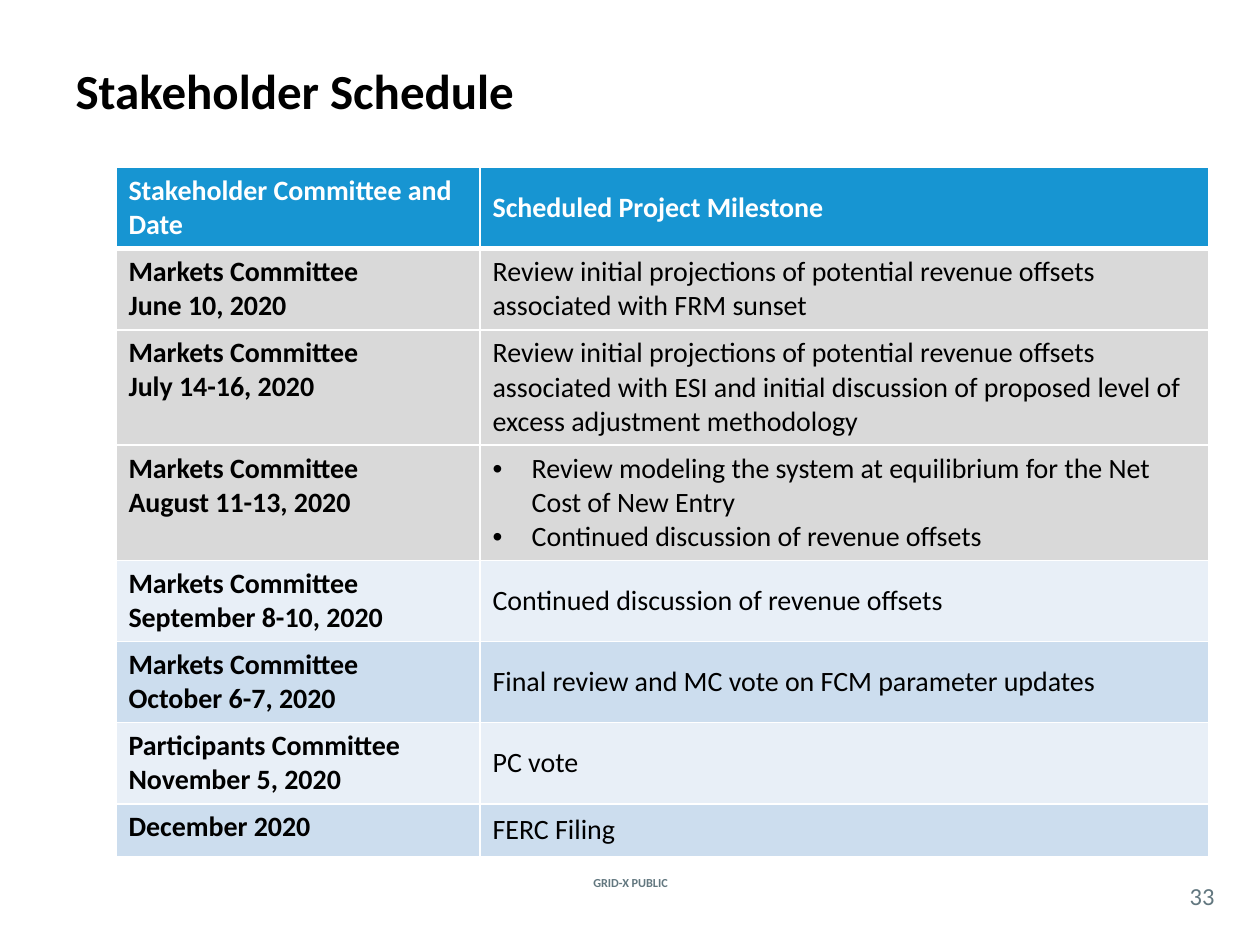
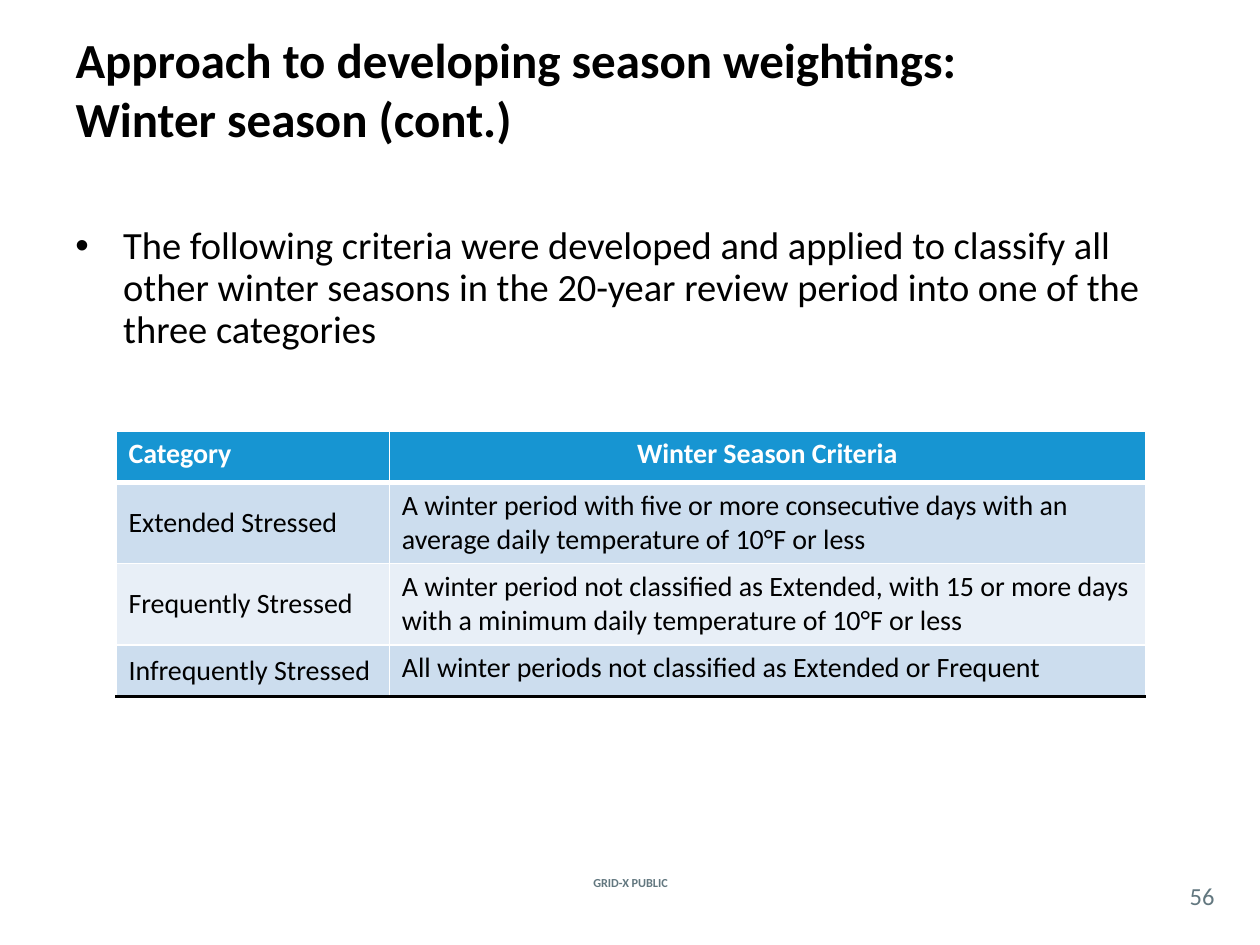
from dataclasses import dataclass

from lxml.etree import SubElement
from pptx import Presentation
from pptx.dml.color import RGBColor
from pptx.enum.text import MSO_ANCHOR as Anchor, MSO_AUTO_SIZE as AutoSize, PP_ALIGN as Align
from pptx.oxml.ns import qn
from pptx.util import Inches, Pt


@dataclass(frozen=True)
class Theme:
    font: str = "Calibri"
    black: str = "000000"
    white: str = "FFFFFF"
    header: str = "1795D2"
    done: str = "D9D9D9"
    light: str = "E8EFF7"
    medium: str = "CCDDEE"
    footer: str = "62777F"
    title_size: int = 28
    body_size: int = 22
    table_size: int = 16
    number_size: int = 14
    footer_size: int = 7
    thin: float = 1
    header_rule: float = 3
    closing_rule: float = 2.25


class DeckBuilder:
    def __init__(self, presentation, theme):
        self.presentation = presentation
        self.theme = theme
        self.slide = None

    def new_slide(self, title, title_top, title_height, number):
        """Start a slide with its title, footer and page number."""
        theme = self.theme
        self.slide = self.presentation.slides.add_slide(self.presentation.slide_layouts[5])
        shape = self.slide.shapes.title
        shape.left, shape.top = Inches(0.5), Inches(title_top)
        shape.width, shape.height = Inches(9), Inches(title_height)
        self.fill_text(shape.text_frame, [title], theme.title_size, theme.black, bold=True)
        self.text((4.27, 6.92, 1.47, 0.17), "GRID-X PUBLIC", theme.footer_size,
                  theme.footer, bold=True, align=Align.CENTER)
        self.text((9.33, 6.96, 0.42, 0.29), str(number), theme.number_size,
                  theme.footer, align=Align.CENTER, margin=0)

    def fill_text(self, frame, lines, size, color, bold=False, align=Align.LEFT,
                  anchor=Anchor.MIDDLE, indent=None):
        """Write paragraphs; an indent in inches makes them bulleted."""
        frame.word_wrap = True
        frame.auto_size = AutoSize.NONE
        frame.vertical_anchor = anchor
        self.fill_paragraphs(frame, lines, size, color, bold, align, indent)

    def fill_paragraphs(self, frame, lines, size, color, bold, align, indent=None):
        frame.text = "\n".join(lines)
        for paragraph in frame.paragraphs:
            if indent:
                self.bullet(paragraph, indent)
            paragraph.alignment = align
            for run in paragraph.runs:
                run.font.name = self.theme.font
                run.font.size = Pt(size)
                run.font.bold = bold
                run.font.color.rgb = RGBColor.from_string(color)

    def bullet(self, paragraph, indent):
        properties = paragraph._p.get_or_add_pPr()
        properties.set("marL", str(Inches(indent)))
        properties.set("indent", str(-Inches(indent)))
        SubElement(properties, qn("a:buFont"), typeface="Arial")
        SubElement(properties, qn("a:buChar"), char="•")

    def text(self, box, text, size, color, bold=False, align=Align.LEFT,
             anchor=Anchor.MIDDLE, margin=None, indent=None):
        frame = self.slide.shapes.add_textbox(*map(Inches, box)).text_frame
        if margin is not None:
            frame.margin_left = frame.margin_right = Inches(margin)
            frame.margin_top = frame.margin_bottom = Inches(margin)
        self.fill_text(frame, [text], size, color, bold, align, anchor, indent)
        return frame

    def table(self, left, top, widths, heights, rows, fills, anchors,
              header_anchor=Anchor.MIDDLE, header_aligns=(Align.LEFT, Align.LEFT),
              bold_first=False, last_rule=None):
        """Draw a table whose first row is the header; a list cell is bulleted."""
        theme = self.theme
        frame = self.slide.shapes.add_table(
            len(rows), len(widths), Inches(left), Inches(top),
            Inches(sum(widths)), Inches(sum(heights)))
        table = frame.table
        table.first_row = table.horz_banding = False
        for column, width in zip(table.columns, widths):
            column.width = Inches(width)
        for row, height in zip(table.rows, heights):
            row.height = Inches(height)

        # One rule above each row and one below the last
        thin = (theme.white, theme.thin)
        rules = [thin] * (len(rows) + 1)
        rules[1] = (theme.white, theme.header_rule)
        rules[-1] = last_rule or thin

        for row_index, values in enumerate(rows):
            is_header = row_index == 0
            for column_index, value in enumerate(values):
                cell = table.cell(row_index, column_index)
                self.borders(cell, thin, thin, rules[row_index], rules[row_index + 1])
                cell.fill.solid()
                cell.fill.fore_color.rgb = RGBColor.from_string(
                    theme.header if is_header else fills[row_index - 1])
                cell.vertical_anchor = header_anchor if is_header else anchors[column_index]
                bulleted = isinstance(value, list)
                self.fill_paragraphs(
                    cell.text_frame, value if bulleted else value.split("\n"),
                    theme.table_size, theme.white if is_header else theme.black,
                    is_header or (bold_first and column_index == 0),
                    header_aligns[column_index] if is_header else Align.LEFT,
                    0.31 if bulleted else None)

    def borders(self, cell, *rules):
        properties = cell._tc.get_or_add_tcPr()
        for side, (color, width) in zip("LRTB", rules):
            line = SubElement(properties, qn(f"a:ln{side}"), w=str(Pt(width)))
            fill = SubElement(line, qn("a:solidFill"))
            SubElement(fill, qn("a:srgbClr"), val=color)


def add_schedule(deck):
    theme = deck.theme
    deck.new_slide("Stakeholder Schedule", 0.42, 0.58, 33)
    rows = [
        ("Stakeholder Committee and Date", "Scheduled Project Milestone"),
        ("Markets Committee\nJune 10, 2020",
         "Review initial projections of potential revenue offsets associated with FRM sunset"),
        ("Markets Committee\nJuly 14-16, 2020",
         "Review initial projections of potential revenue offsets associated with ESI and "
         "initial discussion of proposed level of excess adjustment methodology"),
        ("Markets Committee\nAugust 11-13, 2020",
         ["Review modeling the system at equilibrium for the Net Cost of New Entry",
          "Continued discussion of revenue offsets"]),
        ("Markets Committee\nSeptember 8-10, 2020", "Continued discussion of revenue offsets"),
        ("Markets Committee\nOctober 6-7, 2020",
         "Final review and MC vote on FCM parameter updates"),
        ("Participants Committee\nNovember 5, 2020", "PC vote"),
        ("December 2020", "FERC Filing"),
    ]
    deck.table(0.92, 1.33, [2.89, 5.78],
               [0.63, 0.63, 0.89, 0.89, 0.63, 0.63, 0.63, 0.42], rows,
               fills=[theme.done] * 3 + [theme.light, theme.medium] * 2,
               anchors=(Anchor.TOP, Anchor.MIDDLE), bold_first=True)


def add_winter_criteria(deck):
    theme = deck.theme
    deck.new_slide("Approach to developing season weightings:\vWinter season (cont.)",
                   0.08, 1.25, 56)
    # Introduction
    frame = deck.text(
        (0.5, 1.75, 9, 1.25),
        "The following criteria were developed and applied to classify all other winter "
        "seasons in the 20-year review period into one of the three categories",
        theme.body_size, theme.black, anchor=Anchor.TOP, indent=0.38)
    frame.paragraphs[0].line_spacing = 0.9

    # Criteria for each category
    rows = [
        ("Category", "Winter Season Criteria"),
        ("Extended Stressed",
         "A winter period with five or more consecutive days with an average daily "
         "temperature of 10°F or less"),
        ("Frequently Stressed",
         "A winter period not classified as Extended, with 15 or more days with a minimum "
         "daily temperature of 10°F or less"),
        ("Infrequently Stressed", "All winter periods not classified as Extended or Frequent"),
    ]
    deck.table(0.92, 3.42, [2.17, 6], [0.41, 0.63, 0.63, 0.41], rows,
               fills=[theme.medium, theme.light, theme.medium],
               anchors=(Anchor.MIDDLE, Anchor.TOP), header_anchor=Anchor.TOP,
               header_aligns=(Align.LEFT, Align.CENTER),
               last_rule=(theme.black, theme.closing_rule))


def main():
    presentation = Presentation()
    presentation.slide_width, presentation.slide_height = Inches(10), Inches(7.5)
    deck = DeckBuilder(presentation, Theme())
    add_schedule(deck)
    add_winter_criteria(deck)
    presentation.save("out.pptx")


if __name__ == "__main__":
    main()
